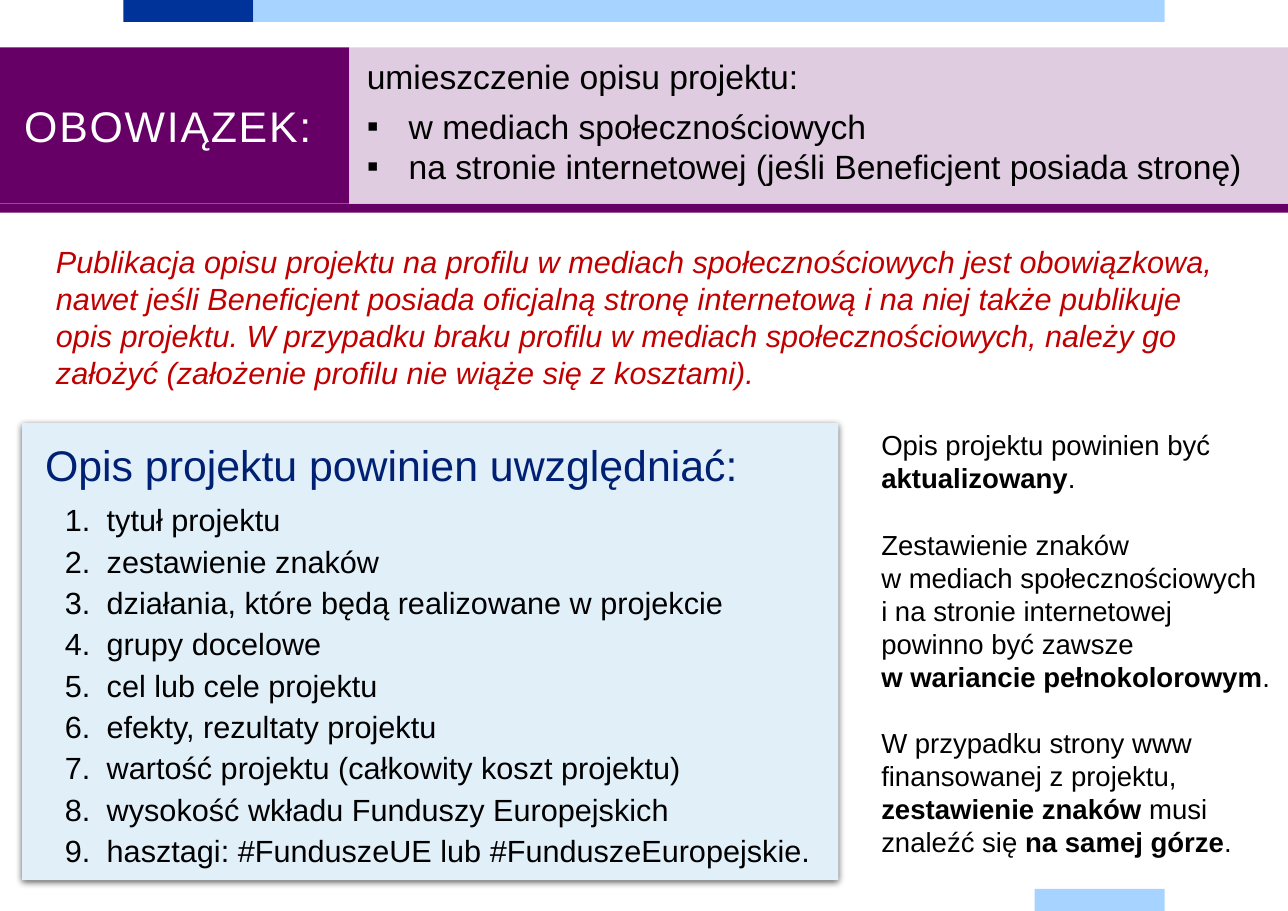
from lxml.etree import SubElement
from pptx import Presentation
from pptx.dml.color import RGBColor
from pptx.enum.shapes import MSO_SHAPE
from pptx.oxml import parse_xml
from pptx.oxml.ns import nsdecls, qn
from pptx.util import Inches, Pt

NAVY = RGBColor(0x00, 0x33, 0x99)
SKY = RGBColor(0xA6, 0xD3, 0xFF)
PALE_BLUE = RGBColor(0xE1, 0xEF, 0xF9)
PURPLE = RGBColor(0x66, 0x00, 0x66)
HEADING_BLUE = RGBColor(0x00, 0x20, 0x73)
RED = RGBColor(0xC0, 0x00, 0x00)
BLACK = RGBColor(0, 0, 0)
WHITE = RGBColor(0xFF, 0xFF, 0xFF)

PAGE_W, PAGE_H = 11.69, 8.27
HANGING = 0.38

DUTIES = [
    "w mediach społecznościowych",
    "na stronie internetowej (jeśli Beneficjent posiada stronę)",
]
NOTICE = (
    "Publikacja opisu projektu na profilu w mediach społecznościowych jest obowiązkowa, "
    "nawet jeśli Beneficjent posiada oficjalną stronę internetową i na niej także publikuje "
    "opis projektu. W przypadku braku profilu w mediach społecznościowych, należy go "
    "założyć (założenie profilu nie wiąże się z kosztami)."
)
CONTENTS = [
    "tytuł projektu",
    "zestawienie znaków",
    "działania, które będą realizowane w projekcie",
    "grupy docelowe",
    "cel lub cele projektu",
    "efekty, rezultaty projektu",
    "wartość projektu (całkowity koszt projektu)",
    "wysokość wkładu Funduszy Europejskich",
    "hasztagi: #FunduszeUE lub #FunduszeEuropejskie.",
]
# Each paragraph is a list of lines, each line a list of (text, bold) runs.
REMARKS = [
    [[("Opis projektu powinien być ", False), ("aktualizowany", True), (".", False)]],
    [
        [("Zestawienie znaków", False)],
        [("w mediach społecznościowych", False)],
        [("i na stronie internetowej", False)],
        [("powinno być zawsze", False)],
        [("w wariancie pełnokolorowym", True), (".", False)],
    ],
    [[
        ("W przypadku strony www finansowanej z projektu, ", False),
        ("zestawienie znaków ", True), ("musi znaleźć się ", False),
        ("na samej górze", True), (".", False),
    ]],
]


def add_rect(s, x, y, w, h, color):
    sp = s.shapes.add_shape(MSO_SHAPE.RECTANGLE, Inches(x), Inches(y), Inches(w), Inches(h))
    sp.shadow.inherit = False
    sp.fill.solid()
    sp.fill.fore_color.rgb = color
    sp.line.fill.background()
    return sp


def add_text_box(s, x, y, w, h, inset=True):
    tf = s.shapes.add_textbox(Inches(x), Inches(y), Inches(w), Inches(h)).text_frame
    tf.word_wrap = True
    if not inset:
        tf.margin_left = tf.margin_top = tf.margin_right = tf.margin_bottom = 0
    return tf


def add_run(p, text, size, color=BLACK, bold=False, italic=False):
    r = p.add_run()
    r.text = text
    r.font.name = "Arial"
    r.font.size = Pt(size)
    r.font.color.rgb = color
    r.font.bold = bold
    r.font.italic = italic
    return r


def set_bullet(p, tag, **attributes):
    """Give the paragraph a hanging bullet (a:buChar) or number (a:buAutoNum)."""
    pPr = p._p.get_or_add_pPr()
    pPr.set("marL", str(Inches(HANGING)))
    pPr.set("indent", str(-Inches(HANGING)))
    SubElement(pPr, qn("a:buFont"), typeface="Arial")
    SubElement(pPr, qn(tag), **attributes)


def add_heading(s, x, y, w, h, text, color):
    p = add_text_box(s, x, y, w, h, inset=False).paragraphs[0]
    p.line_spacing = Pt(36)
    return add_run(p, text, 28, color)


def add_page_bars(s):
    module, thickness, left = 1.18, 0.2, 1.12
    right = left + 8 * module + 0.01
    add_rect(s, left, 0, module, thickness, NAVY)
    add_rect(s, left + module, 0, right - left - module, thickness, SKY)
    add_rect(s, right - module, PAGE_H - thickness, module, thickness, SKY)


def add_duty_band(s, x, y, w, h):
    label_w = 3.17
    add_rect(s, x, y, label_w, h, PURPLE)
    title = add_heading(s, x + 0.22, y + 0.44, label_w - 0.44, 0.55, "OBOWIĄZEK:", WHITE)
    title.font._element.set("spc", "120")

    tint = add_rect(s, x + label_w, y, w - label_w, h, PURPLE)
    color = tint.fill._xPr.find(qn("a:solidFill"))[0]
    SubElement(color, qn("a:alpha"), val="20000")

    tf = add_text_box(s, x + label_w + 0.16, y + 0.08, w - label_w - 0.16, 0.87, inset=False)
    p = tf.paragraphs[0]
    p.space_after = Pt(6)
    add_run(p, "umieszczenie opisu projektu:", 22)
    for duty in DUTIES:
        p = tf.add_paragraph()
        set_bullet(p, "a:buChar", char="▪")
        add_run(p, duty, 22)
    add_rect(s, x, y + h, w, 0.08, PURPLE)


def add_notice(s, x, y, w, h):
    p = add_text_box(s, x, y, w, h).paragraphs[0]
    add_run(p, NOTICE, 20, RED, italic=True)


def add_contents_card(s, x, y, w, h):
    card = add_rect(s, x, y, w, h, PALE_BLUE)
    effects = card._element.spPr.find(qn("a:effectLst"))
    effects.append(parse_xml(
        f'<a:outerShdw {nsdecls("a")} blurRad="{Pt(4.5)}" dist="{Pt(1.5)}" dir="5400000" '
        'rotWithShape="0"><a:srgbClr val="000000"><a:alpha val="63000"/></a:srgbClr>'
        '</a:outerShdw>'))
    add_heading(s, x + 0.21, y + 0.11, w - 0.48, 0.47,
                "Opis projektu powinien uwzględniać:", HEADING_BLUE)
    tf = add_text_box(s, x + 0.29, y + 0.66, w - 0.29, h - 0.68)
    for i, item in enumerate(CONTENTS):
        p = tf.add_paragraph() if i else tf.paragraphs[0]
        p.space_after = Pt(3)
        set_bullet(p, "a:buAutoNum", type="arabicPeriod")
        add_run(p, item, 20)


def add_remarks(s, x, y, w, h):
    tf = add_text_box(s, x, y, w, h)
    for i, lines in enumerate(REMARKS):
        p = tf.add_paragraph() if i else tf.paragraphs[0]
        if i:
            p.space_before = Pt(21.6)
        for j, runs in enumerate(lines):
            if j:
                p.add_line_break()
            for text, bold in runs:
                add_run(p, text, 18, bold=bold)


def main():
    prs = Presentation()
    prs.slide_width, prs.slide_height = Inches(PAGE_W), Inches(PAGE_H)
    s = prs.slides.add_slide(prs.slide_layouts[6])
    add_page_bars(s)
    add_duty_band(s, 0, 0.43, PAGE_W, 1.42)
    add_notice(s, 0.41, 2.16, 10.87, 1.45)
    add_contents_card(s, 0.2, 3.84, 7.41, 4.15)
    add_remarks(s, 7.9, 3.84, 3.79, 4.04)
    prs.save("out.pptx")


if __name__ == "__main__":
    main()
